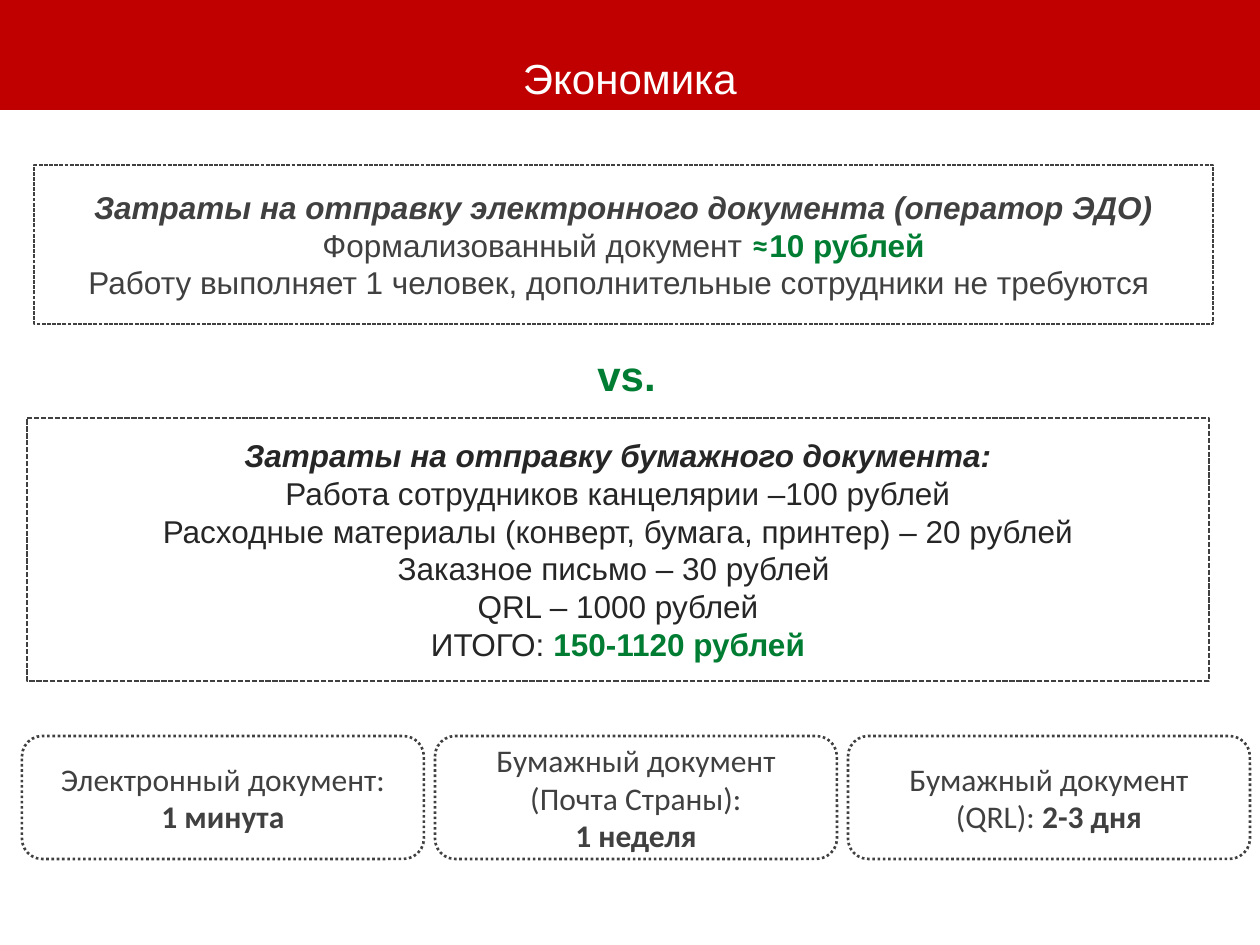
import pptx
import pptx.dml.color
import pptx.enum.dml
import pptx.enum.shapes
import pptx.enum.text
import pptx.util

SHAPE = pptx.enum.shapes.MSO_SHAPE
DASH = pptx.enum.dml.MSO_LINE
ALIGN = pptx.enum.text.PP_ALIGN
ANCHOR = pptx.enum.text.MSO_ANCHOR

RED, WHITE, GREY, DARK, GREEN = "C00000", "FFFFFF", "404040", "262626", "007D32"
HEADING = {"bold": True, "italic": True}
STRONG = {"bold": True}
RESULT = {"bold": True, "color": GREEN}

ELECTRONIC_COSTS = [
    [("Затраты на отправку электронного документа (оператор ЭДО)", HEADING)],
    [
        ("Формализованный документ ", {}),
        ("≈", {**RESULT, "font": "Lato"}),
        ("10 рублей", RESULT),
    ],
    [("Работу выполняет 1 человек, дополнительные сотрудники не требуются ", {})],
]
PAPER_COSTS = [
    [("Затраты на отправку бумажного документа:", HEADING)],
    [("Работа сотрудников канцелярии –100 рублей", {})],
    [("Расходные материалы (конверт, бумага, принтер) – 20 рублей", {})],
    [("Заказное письмо – 30 рублей ", {})],
    [("QRL – 1000 рублей", {})],
    [("ИТОГО: ", {}), ("150-1120 рублей", RESULT)],
]
DELIVERY_TIMES = [
    [[("Электронный документ:", {})], [("1 минута", STRONG)]],
    [[("Бумажный документ (Почта Страны):", {})], [("1 неделя", STRONG)]],
    [[("Бумажный документ", {})], [("(QRL): ", {}), ("2-3 дня", STRONG)]],
]


def px(length):
    """Turn pixels into EMU."""
    return pptx.util.Inches(length / 126)


def rgb(value):
    """Turn a hex string into a colour."""
    return pptx.dml.color.RGBColor.from_string(value)


def add_span(para, text, font="Arial", size=18, color=GREY, bold=False, italic=False):
    """Append one formatted run of text to a paragraph."""
    span = para.add_run()
    span.text = text
    span.font.name = font
    span.font.size = pptx.util.Pt(size)
    span.font.color.rgb = rgb(color)
    span.font.bold = bold
    span.font.italic = italic


def fill_text(frame, lines, align=ALIGN.CENTER, spacing=None, **style):
    """Write lines of spans, each span overriding the common style."""
    for index, line in enumerate(lines):
        para = frame.paragraphs[0] if index == 0 else frame.add_paragraph()
        para.alignment = align
        para.line_spacing = spacing
        for text, override in line:
            add_span(para, text, **{**style, **override})


def add_box(page, kind, left, top, width, height, fill=WHITE, anchor=ANCHOR.MIDDLE):
    """Add a filled shape without outline or shadow."""
    box = page.shapes.add_shape(kind, px(left), px(top), px(width), px(height))
    box.shadow.inherit = False
    box.fill.solid()
    box.fill.fore_color.rgb = rgb(fill)
    box.line.fill.background()
    box.text_frame.word_wrap = True
    box.text_frame.vertical_anchor = anchor
    return box


def outline(box, width, dash):
    """Give a box a dashed grey border."""
    box.line.color.rgb = rgb(GREY)
    box.line.width = pptx.util.Pt(width)
    box.line.dash_style = dash


def add_title(page, text):
    """Add the red title band."""
    band = add_box(page, SHAPE.RECTANGLE, 0, 0, 1260, 110, RED, ANCHOR.BOTTOM)
    fill_text(band.text_frame, [[(text, {})]], spacing=0.9, size=24, color=WHITE)


def add_costs(page, left, top, width, height, lines, border, color):
    """Add a dashed panel with a list of costs."""
    panel = add_box(page, SHAPE.RECTANGLE, left, top, width, height)
    outline(panel, border, DASH.SQUARE_DOT)
    fill_text(panel.text_frame, lines, color=color)


def add_versus(page, text):
    """Add the green label between the two panels."""
    label = page.shapes.add_textbox(px(585), px(343), px(84), px(63))
    label.text_frame.word_wrap = False
    label.text_frame.auto_size = pptx.enum.text.MSO_AUTO_SIZE.SHAPE_TO_FIT_TEXT
    fill_text(label.text_frame, [[(text, RESULT)]], align=ALIGN.LEFT, size=24)


def add_delivery_times(page):
    """Add the row of rounded delivery time cards."""
    for index, lines in enumerate(DELIVERY_TIMES):
        card = add_box(page, SHAPE.ROUNDED_RECTANGLE, 22 + 413 * index, 736, 402, 123)
        outline(card, 1.5, DASH.ROUND_DOT)
        fill_text(card.text_frame, lines, font="Calibri")


def main():
    """Build the slide and save it."""
    deck = pptx.Presentation()
    deck.slide_width, deck.slide_height = px(1260), px(945)
    page = deck.slides.add_slide(deck.slide_layouts[6])
    add_title(page, "Экономика")
    add_costs(page, 34, 165, 1179, 159, ELECTRONIC_COSTS, 0.75, GREY)
    add_versus(page, "vs.")
    add_costs(page, 27, 418, 1182, 263, PAPER_COSTS, 1, DARK)
    add_delivery_times(page)
    deck.save("out.pptx")


if __name__ == "__main__":
    main()
